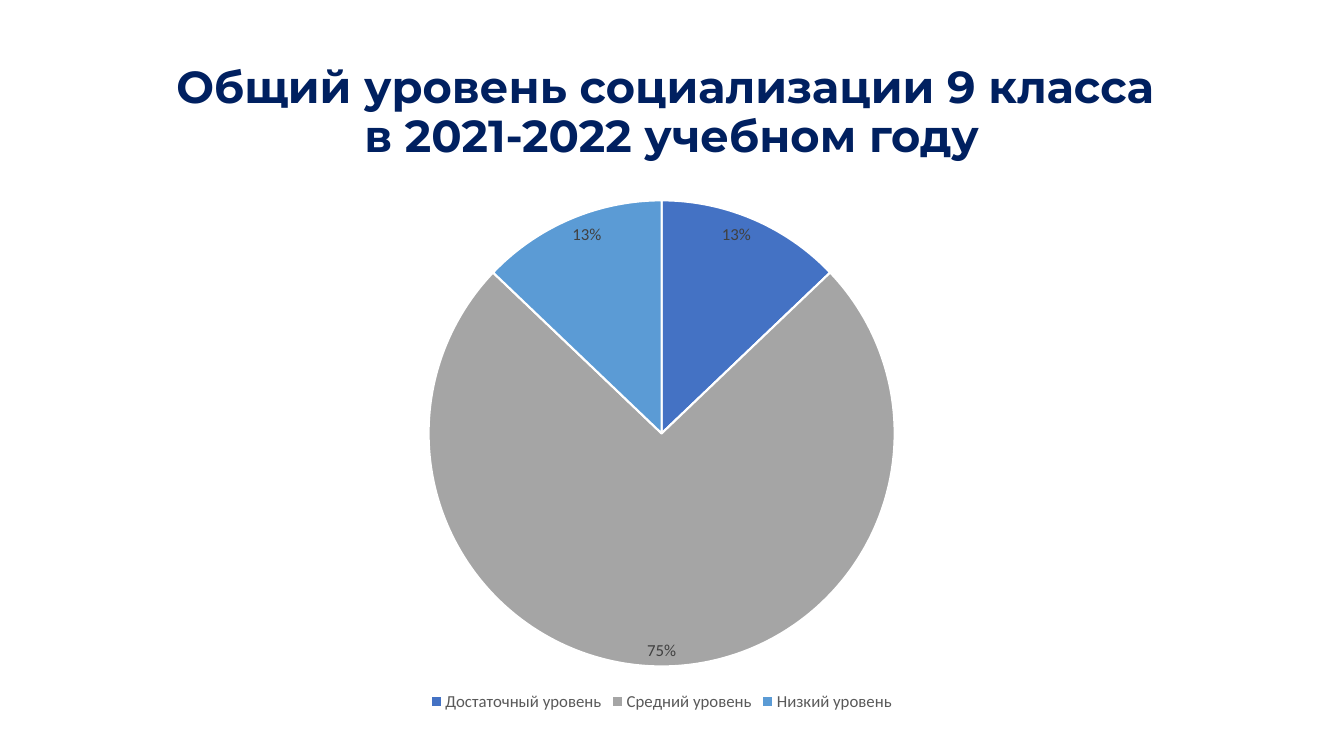
from pptx import Presentation
from pptx.chart.data import CategoryChartData
from pptx.dml.color import RGBColor
from pptx.enum.chart import XL_CHART_TYPE, XL_LABEL_POSITION, XL_LEGEND_POSITION
from pptx.enum.text import MSO_ANCHOR, PP_ALIGN
from pptx.util import Pt

# Content
NAVY = RGBColor(0x00, 0x20, 0x60)
BLUE = RGBColor(0x44, 0x72, 0xC4)
GRAY = RGBColor(0xA5, 0xA5, 0xA5)
SKY = RGBColor(0x5B, 0x9B, 0xD5)
WHITE = RGBColor(0xFF, 0xFF, 0xFF)
LABEL_GRAY = RGBColor(0x40, 0x40, 0x40)
LEGEND_GRAY = RGBColor(0x59, 0x59, 0x59)

TITLE = "Общий уровень социализации 9 класса \vв 2021-2022 учебном году"
LEVELS = [
    ("Достаточный уровень", 0.13, BLUE),
    ("Средний уровень", 0.75, GRAY),
    ("Низкий уровень", 0.13, SKY),
]


def set_font(font, name, size, color):
    font.name = name
    font.size = Pt(size)
    font.color.rgb = color


prs = Presentation()
prs.slide_width, prs.slide_height = Pt(960), Pt(540)
s = prs.slides.add_slide(prs.slide_layouts[6])

# Title
sp = s.shapes.add_textbox(Pt(66), Pt(28.75), Pt(828), Pt(104.4))
tf = sp.text_frame
tf.word_wrap = True
tf.vertical_anchor = MSO_ANCHOR.MIDDLE
p = tf.paragraphs[0]
p.text = TITLE
p.alignment = PP_ALIGN.CENTER
p.line_spacing = 0.9
p.font.bold = True
set_font(p.font, "Montserrat", 32, NAVY)

# Pie chart
data = CategoryChartData(number_format="0%")
data.categories = [name for name, _, _ in LEVELS]
data.add_series("Series 1", [value for _, value, _ in LEVELS])
chart = s.shapes.add_chart(
    XL_CHART_TYPE.PIE, Pt(39.6), Pt(133.2), Pt(866), Pt(378), data
).chart
chart.has_title = False
chart.font.name = "Calibri"
chart.font.size = Pt(10)

plot = chart.plots[0]
plot.vary_by_categories = True
series = plot.series[0]
for i, (_, _, color) in enumerate(LEVELS):
    point = series.points[i].format
    point.fill.solid()
    point.fill.fore_color.rgb = color
    point.line.color.rgb = WHITE
    point.line.width = Pt(1.5)

# Value labels
labels = series.data_labels
labels.show_value = True
labels.show_percentage = False
labels.number_format = "0%"
labels.number_format_is_linked = False
labels.position = XL_LABEL_POSITION.INSIDE_END
set_font(labels.font, "Calibri", 12, LABEL_GRAY)

# Legend
chart.has_legend = True
chart.legend.position = XL_LEGEND_POSITION.BOTTOM
chart.legend.include_in_layout = False
set_font(chart.legend.font, "Calibri", 12, LEGEND_GRAY)

prs.save("out.pptx")
